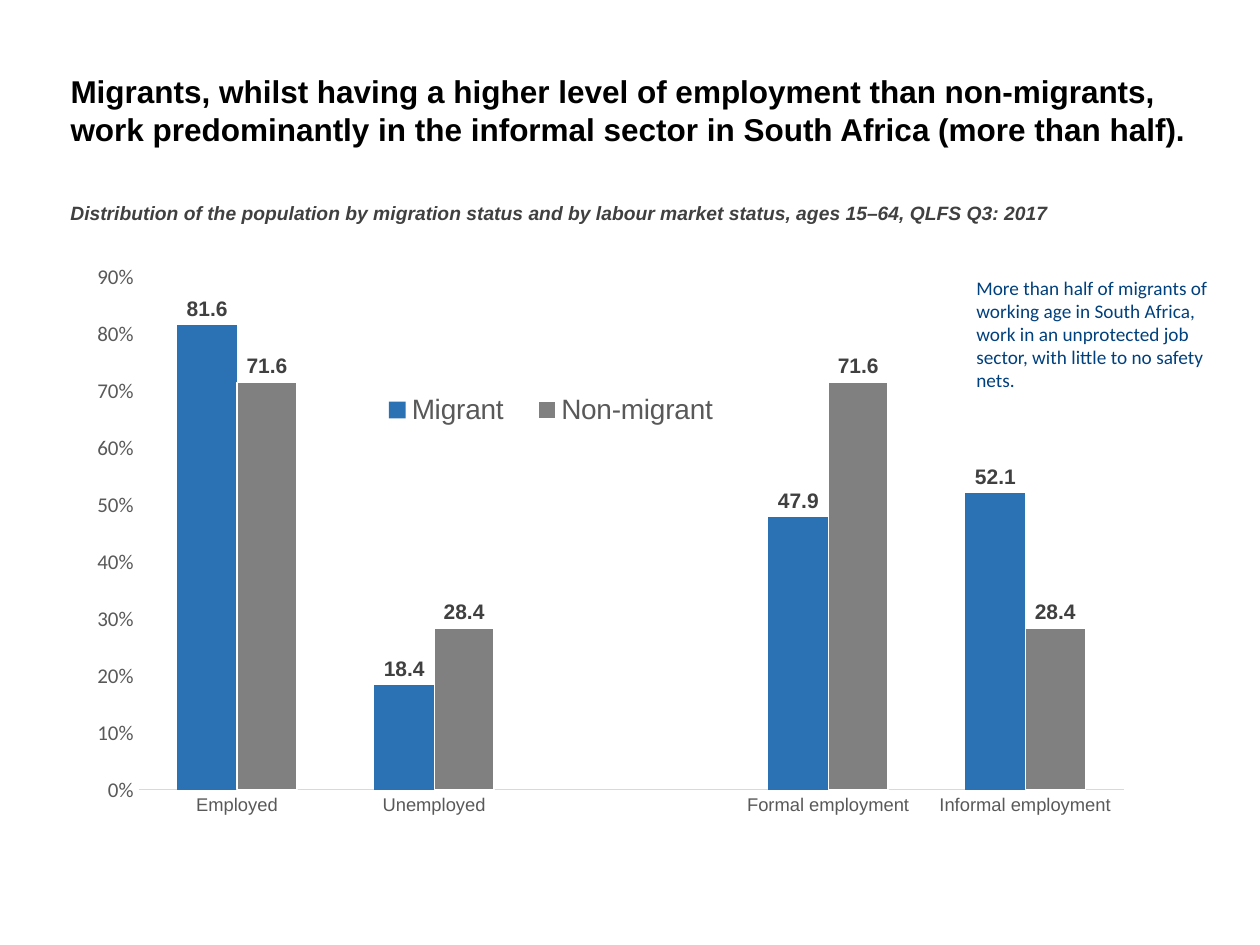
"""Build a slide comparing the labour market status of migrants and non-migrants."""
from lxml import etree
from pptx import Presentation
from pptx.chart import data
from pptx.dml import color
from pptx.enum import chart as ce, text
from pptx.oxml import ns
from pptx.util import Inches, Pt

THEME = {
    "title": {"name": "Arial", "size": 18, "color": "000000", "bold": True},
    "subtitle": {"name": "Arial", "size": 11, "color": "404040", "bold": True, "italic": True},
    "note": {"name": "Calibri", "size": 11, "color": "00407D"},
    "chart": {"name": "Arial", "size": 14, "color": "000000"},
    "category": {"name": "Arial", "size": 10.5, "color": "595959"},
    "value": {"name": "Calibri", "size": 12, "color": "595959"},
    "legend": {"name": "Arial", "size": 16, "color": "595959"},
    "label": {"name": "Arial", "size": 12, "color": "404040", "bold": True},
    "Migrant": "2B72B5",
    "Non-migrant": "808080",
    "axis": "D9D9D9",
    "edge": "FFFFFF",
}
SERIES = {
    "Migrant": (81.6, 18.4, None, 47.9, 52.1),
    "Non-migrant": (71.6, 28.4, None, 71.6, 28.4),
}


def set_font(font, style):
    for key, val in THEME[style].items():
        if key == "color":
            font.color.rgb = color.RGBColor.from_string(val)
        else:
            setattr(font, key, Pt(val) if key == "size" else val)


def set_layout(parent, index, box, inner=False):
    for old in parent.findall(ns.qn("c:layout")):
        parent.remove(old)
    layout = etree.Element(ns.qn("c:layout"))
    manual = etree.SubElement(layout, ns.qn("c:manualLayout"))
    items = [("layoutTarget", "inner")] if inner else []
    items += [("xMode", "edge"), ("yMode", "edge"), *zip("xywh", box)]
    for tag, val in items:
        etree.SubElement(manual, ns.qn(f"c:{tag}")).set("val", str(val))
    parent.insert(index, layout)


prs = Presentation()
prs.slide_width, prs.slide_height = Inches(10), Inches(7.5)
s = prs.slides.add_slide(prs.slide_layouts[5])

cd = data.CategoryChartData(number_format="0.0")
cd.categories = ["Employed", "Unemployed", "", "Formal employment", "Informal employment"]
for name, values in SERIES.items():
    cd.add_series(name, values)
box = [Inches(v) for v in (0.59, 2.02, 8.5, 4.57)]
chart = s.shapes.add_chart(ce.XL_CHART_TYPE.COLUMN_CLUSTERED, *box, cd).chart
set_font(chart.font, "chart")
chart.has_title = False

plot = chart.plots[0]
plot.gap_width, plot.overlap, plot.vary_by_categories = 129, 0, False
for ser in plot.series:
    ser.format.fill.solid()
    ser.format.fill.fore_color.rgb = color.RGBColor.from_string(THEME[ser.name])
    labels = ser.data_labels
    for key, val in {"show_value": True, "number_format": "0.0",
                     "number_format_is_linked": False,
                     "position": ce.XL_LABEL_POSITION.OUTSIDE_END}.items():
        setattr(labels, key, val)
    set_font(labels.font, "label")
edge = plot.series[1].format.line
edge.color.rgb = color.RGBColor.from_string(THEME["edge"])
edge.width = Pt(0.75)

for axis, style in ((chart.category_axis, "category"), (chart.value_axis, "value")):
    axis.has_major_gridlines = False
    axis.major_tick_mark = axis.minor_tick_mark = ce.XL_TICK_MARK.NONE
    set_font(axis.tick_labels.font, style)
line = chart.category_axis.format.line
line.color.rgb = color.RGBColor.from_string(THEME["axis"])
line.width = Pt(0.75)
axis = chart.value_axis
axis.minimum_scale, axis.maximum_scale, axis.major_unit = 0, 90, 10
axis.format.line.fill.background()
axis.tick_labels.number_format = "0\\%"
axis.tick_labels.number_format_is_linked = False

chart.has_legend = True
legend = chart.legend
legend.position = ce.XL_LEGEND_POSITION.BOTTOM
legend.include_in_layout = True
set_font(legend.font, "legend")
root = chart.element
set_layout(root.find(".//" + ns.qn("c:legend")), 1, (0.27, 0.22, 0.35, 0.1))
set_layout(root.find(".//" + ns.qn("c:plotArea")), 0, (0.06, 0.04, 0.92, 0.89), inner=True)

TEXTS = [
    ("title", (0.46, 0.52, 9.32, 0.71),
     "Migrants, whilst having a higher level of employment than non-migrants, "
     "work predominantly in the informal sector in South Africa (more than half)."),
    ("subtitle", (0.46, 1.55, 8.09, 0.29),
     "Distribution of the population by migration status and by labour market status, "
     "ages 15–64, QLFS Q3: 2017"),
    ("note", (7.65, 2.14, 2.12, 1.03),
     "More than half of migrants of working age in South Africa, work in an "
     "unprotected job sector, with little to no safety nets."),
]
for style, at, words in TEXTS:
    box = [Inches(v) for v in at]
    sp = s.shapes.title if style == "title" else s.shapes.add_textbox(*box)
    sp.left, sp.top, sp.width, sp.height = box
    tf = sp.text_frame
    for key, val in {"word_wrap": True, "auto_size": text.MSO_AUTO_SIZE.SHAPE_TO_FIT_TEXT,
                     "vertical_anchor": text.MSO_ANCHOR.TOP}.items():
        setattr(tf, key, val)
    p = tf.paragraphs[0]
    p.alignment = text.PP_ALIGN.LEFT
    r = p.add_run()
    r.text = words
    set_font(r.font, style)

prs.save("out.pptx")
